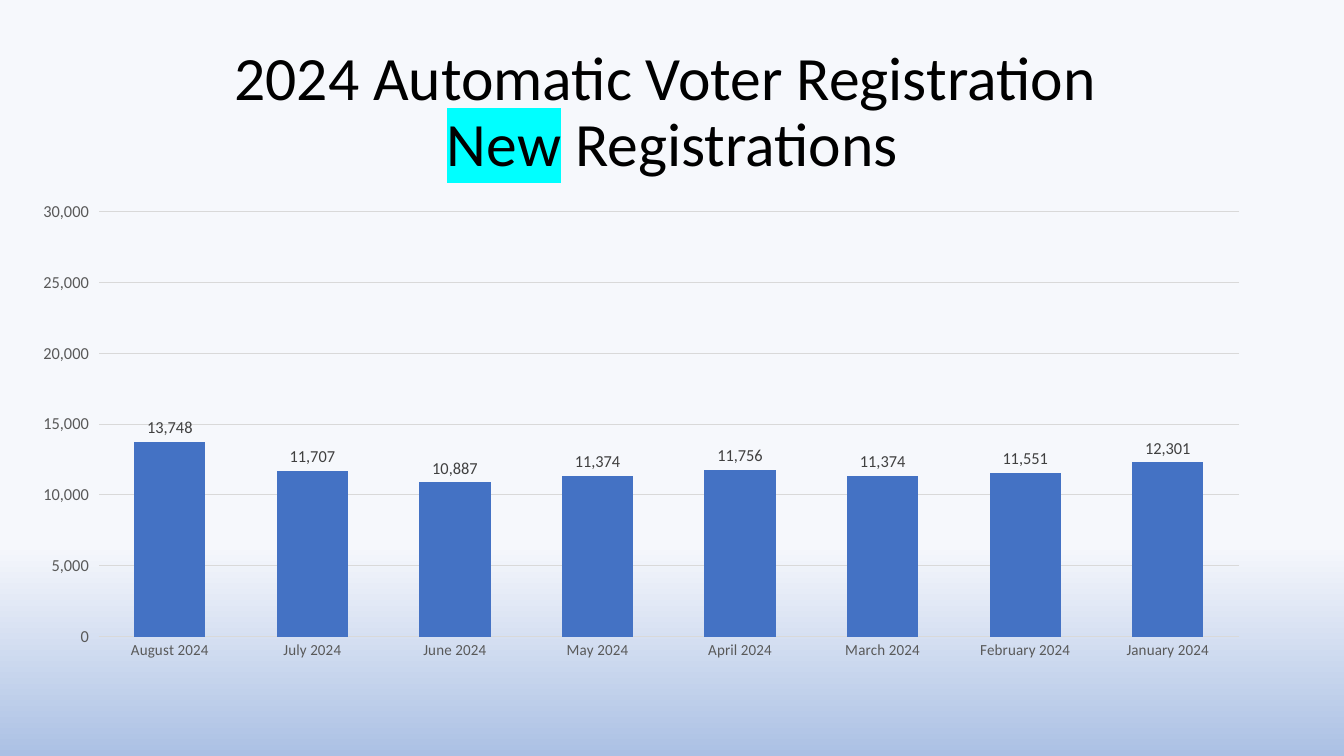
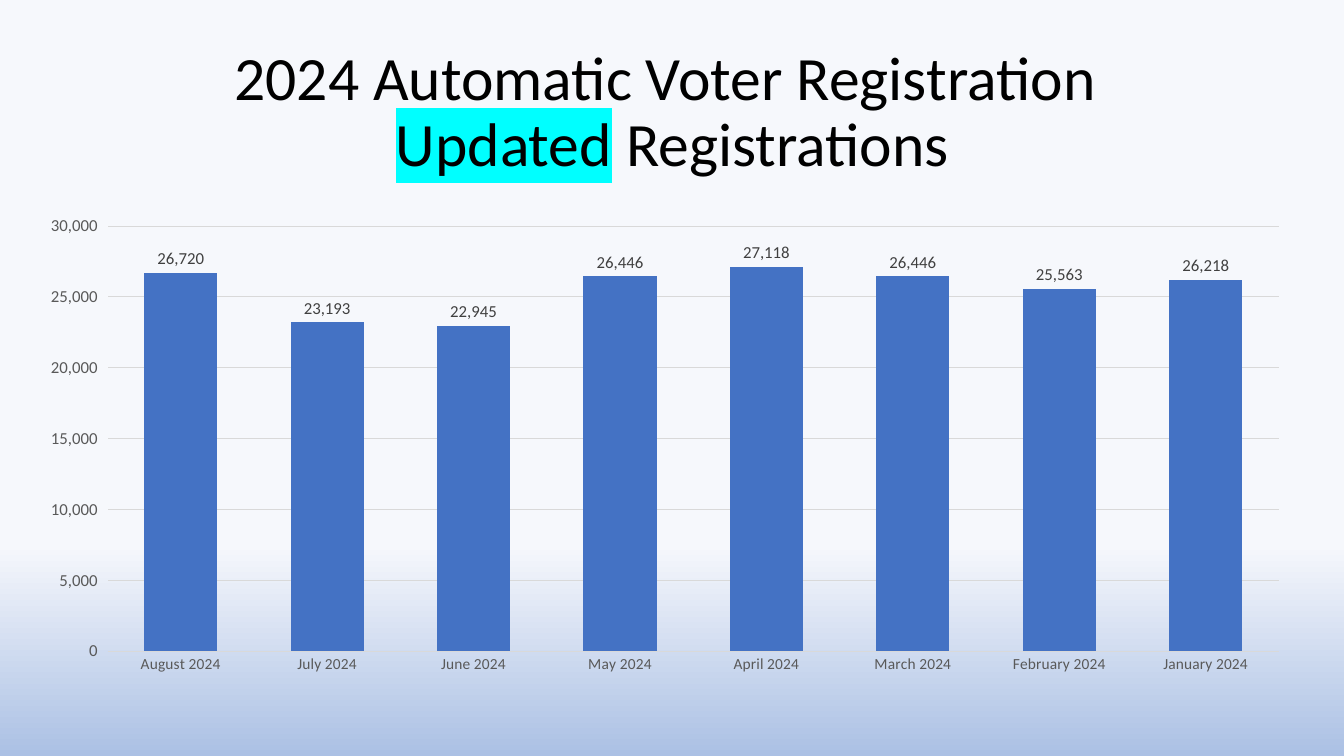
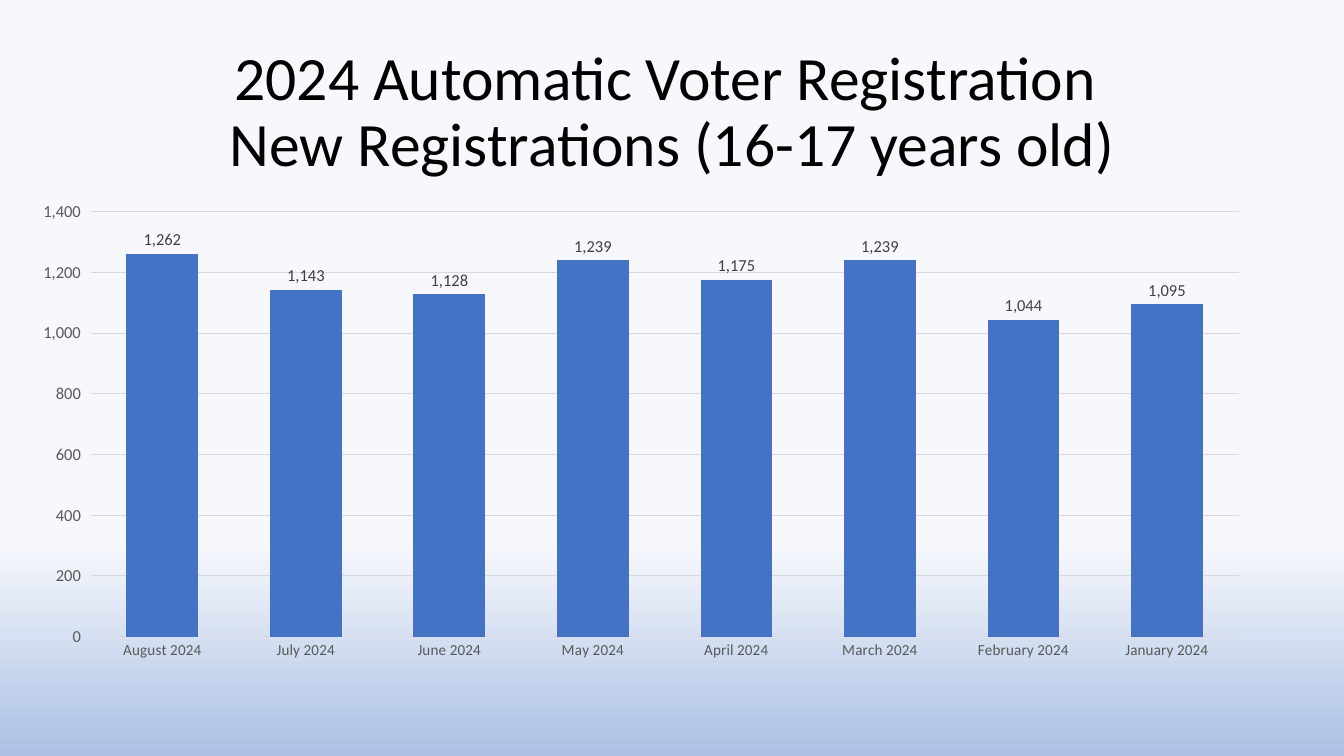
from pptx import Presentation
from pptx import util as u
from pptx.chart.data import CategoryChartData
from pptx.dml.color import RGBColor
from pptx.enum import chart as ch
from pptx.enum import text
from pptx.oxml import parse_xml
from pptx.oxml.ns import nsdecls, qn

BLACK = RGBColor(0x00, 0x00, 0x00)
DARK_GREY = RGBColor(0x40, 0x40, 0x40)
GREY = RGBColor(0x59, 0x59, 0x59)
LIGHT_GREY = RGBColor(0xD9, 0xD9, 0xD9)
BLUE = RGBColor(0x44, 0x72, 0xC4)
CYAN = RGBColor(0x00, 0xFF, 0xFF)
PALE = RGBColor(0xF6, 0xF8, 0xFC)
SKY = RGBColor(0xAB, 0xC0, 0xE4)

FONT = "Calibri"
NUMBER_FORMAT = "#,##0"
HEADING = "2024 Automatic Voter Registration "
MONTHS = ["January", "February", "March", "April", "May", "June", "July", "August"]

# Left and top of the plot, as fractions of the chart
WIDE_PLOT = (0.018, 0.021)
INSET_PLOT = (0.051, 0.051)

# Highlighted word, rest of the second line, axis maximum, plot corner, values
SLIDES = [
    ("New", " Registrations", 30000, WIDE_PLOT,
     [12301, 11551, 11374, 11756, 11374, 10887, 11707, 13748]),
    ("Updated", " Registrations", 30000, INSET_PLOT,
     [26218, 25563, 26446, 27118, 26446, 22945, 23193, 26720]),
    ("", "New Registrations (16-17 years old)", 1400, WIDE_PLOT,
     [1095, 1044, 1239, 1175, 1239, 1128, 1143, 1262]),
]


class RegistrationDeck:
    """Holds the shared style and the slide being built."""

    def __init__(self):
        self.deck = Presentation()
        self.deck.slide_width = u.Inches(13.33)
        self.deck.slide_height = u.Inches(7.5)
        self.page = None
        fill = self.deck.slide_master.background.fill
        fill.gradient()
        fill.gradient_angle = 270
        for stop, position, color in zip(fill.gradient_stops, (0.72, 1), (PALE, SKY)):
            stop.position = position
            stop.color.rgb = color

    def add_page(self):
        self.page = self.deck.slides.add_slide(self.deck.slide_layouts[5])

    def style_font(self, font, size, color):
        font.name = FONT
        font.size = u.Pt(size)
        font.color.rgb = color

    def highlight(self, span):
        mark = parse_xml(
            f'<a:highlight {nsdecls("a")}><a:srgbClr val="{CYAN}"/></a:highlight>')
        span.font._element.find(qn("a:latin")).addprevious(mark)

    def add_title(self, marked, rest):
        title = self.page.shapes.title
        title.left, title.top = u.Inches(0.92), u.Inches(0.4)
        title.width, title.height = u.Inches(11.5), u.Inches(1.45)
        frame = title.text_frame
        frame.word_wrap = True
        frame.auto_size = text.MSO_AUTO_SIZE.NONE
        frame.vertical_anchor = text.MSO_ANCHOR.MIDDLE
        para = frame.paragraphs[0]
        para.alignment = text.PP_ALIGN.CENTER
        para.line_spacing = 0.9
        para.text = HEADING
        para.add_line_break()
        for words in filter(None, (marked, rest)):
            para.add_run().text = words
        for span in para.runs:
            self.style_font(span.font, 44, BLACK)
            if span.text == marked:
                self.highlight(span)

    def add_columns(self, values, maximum, corner):
        data = CategoryChartData(number_format=NUMBER_FORMAT)
        data.categories = [f"{month} 2024" for month in MONTHS]
        data.add_series("Series 1", values)
        chart = self.page.shapes.add_chart(
            ch.XL_CHART_TYPE.COLUMN_CLUSTERED, u.Inches(0.43), u.Inches(2),
            u.Inches(12.48), u.Inches(4.76), data).chart
        chart.has_title = False
        chart.has_legend = False
        self.style_font(chart.font, 10, BLACK)
        self.style_plot(chart.plots[0])
        self.style_axes(chart, maximum)
        self.place_plot(chart, corner)

    def style_plot(self, plot):
        plot.gap_width = 100
        plot.overlap = -27
        plot.vary_by_categories = False
        fill = plot.series[0].format.fill
        fill.solid()
        fill.fore_color.rgb = BLUE
        plot.has_data_labels = True
        labels = plot.data_labels
        labels.show_value = True
        labels.position = ch.XL_LABEL_POSITION.OUTSIDE_END
        labels.number_format = NUMBER_FORMAT
        labels.number_format_is_linked = False
        self.style_font(labels.font, 12, DARK_GREY)

    def style_axes(self, chart, maximum):
        months, counts = chart.category_axis, chart.value_axis
        for axis, size in ((months, 11), (counts, 12)):
            axis.major_tick_mark = axis.minor_tick_mark = ch.XL_TICK_MARK.NONE
            self.style_font(axis.tick_labels.font, size, GREY)
        # Newest month first, with the value labels kept on the left
        months.reverse_order = True
        counts.tick_label_position = ch.XL_TICK_LABEL_POSITION.HIGH
        counts.minimum_scale = 0
        counts.maximum_scale = maximum
        counts.tick_labels.number_format = NUMBER_FORMAT
        counts.tick_labels.number_format_is_linked = False
        counts.format.line.fill.background()
        counts.has_major_gridlines = True
        for line in (months.format.line, counts.major_gridlines.format.line):
            line.color.rgb = LIGHT_GREY
            line.width = u.Pt(0.75)

    def place_plot(self, chart, corner):
        """Fix the inner plot area, in fractions of the chart."""
        area = chart.element.find(".//" + qn("c:plotArea"))
        for layout in area.findall(qn("c:layout")):
            area.remove(layout)
        sizes = zip("xywh", (*corner, 0.931, 0.886))
        places = "".join(f'<c:{side} val="{share}"/>' for side, share in sizes)
        area.insert(0, parse_xml(
            f'<c:layout {nsdecls("c")}><c:manualLayout><c:layoutTarget val="inner"/>'
            '<c:xMode val="edge"/><c:yMode val="edge"/>'
            f'{places}</c:manualLayout></c:layout>'))


def main():
    report = RegistrationDeck()
    for marked, rest, maximum, corner, values in SLIDES:
        report.add_page()
        report.add_title(marked, rest)
        report.add_columns(values, maximum, corner)
    report.deck.save("out.pptx")


if __name__ == "__main__":
    main()
